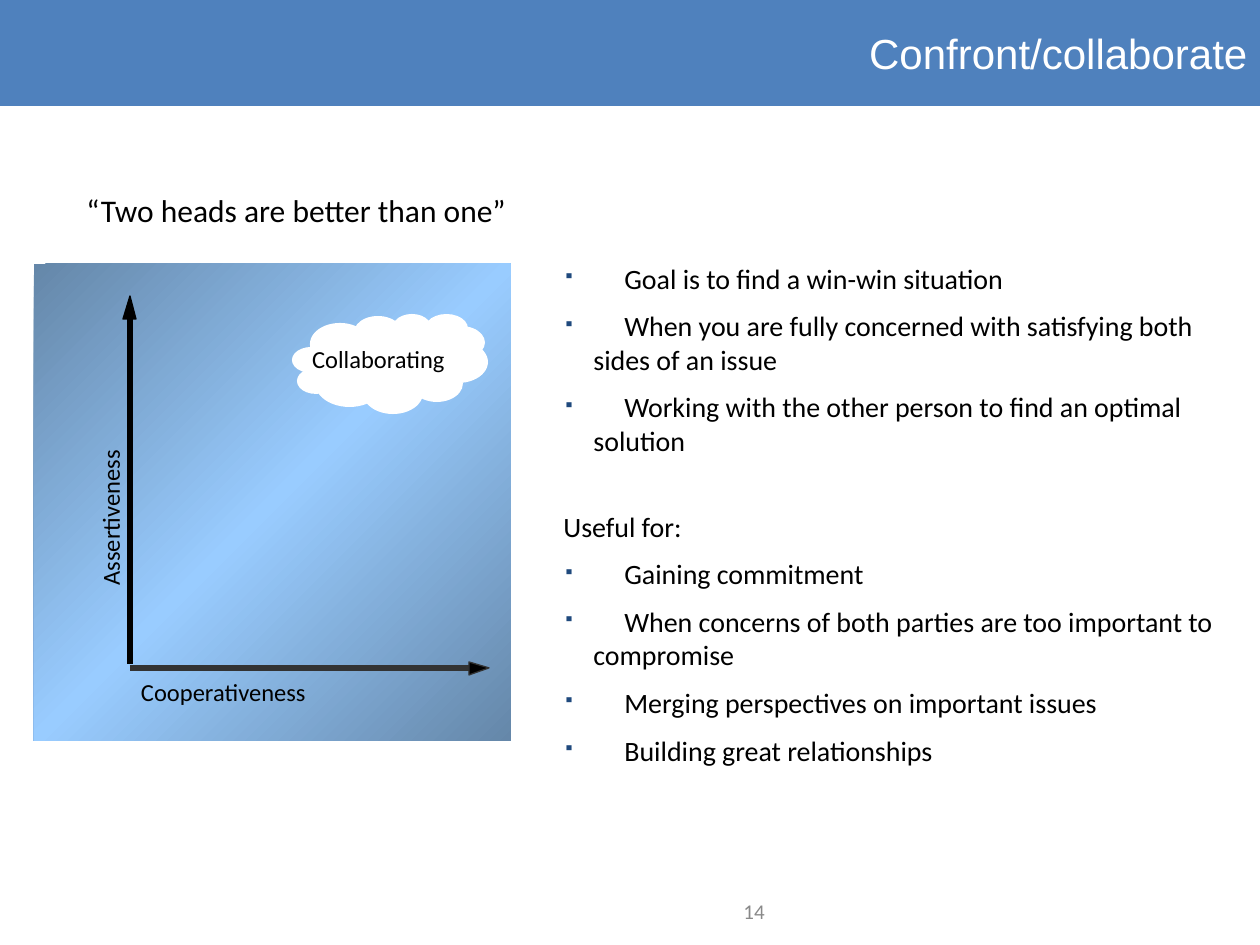
from copy import deepcopy

from lxml.etree import SubElement
from pptx import Presentation
from pptx.dml.color import RGBColor
from pptx.enum.shapes import MSO_CONNECTOR as Line, MSO_SHAPE as Kind
from pptx.enum.text import MSO_ANCHOR as Anchor, MSO_AUTO_SIZE as Fit, PP_ALIGN as Align
from pptx.oxml.ns import qn
from pptx.util import Pt

PX = 914400 / 126

TITLE = "Confront/collaborate"
QUOTE = "“Two heads are better than one”"
GOALS = [
    "Goal is to find a win-win situation",
    "When you are fully concerned with satisfying both sides of an issue",
    "Working with the other person to find an optimal solution",
]
USES = [
    "Gaining commitment",
    "When concerns of both parties are too important to compromise",
    "Merging perspectives on important issues",
    "Building great relationships",
]
STOPS = [(0, "6587A9"), (0.5, "99CCFF"), (1, "6587A9")]
PUFFS = [
    (354, 316, 48, 33), (393, 314, 38, 26), (428, 341, 60, 42),
    (315, 359, 69, 48), (411, 365, 52, 37), (297, 368, 38, 26),
    (292, 347, 39, 26), (310, 323, 60, 42), (363, 372, 60, 42),
    (437, 326, 48, 33), (425, 314, 43, 29),
]
CORE = [
    (360, 329), (368, 324), (399, 324), (422, 321), (451, 331), (465, 328),
    (473, 329), (474, 353), (479, 357), (465, 375), (451, 362), (447, 369),
    (427, 394), (360, 401), (325, 396), (314, 381), (314, 364), (309, 352),
]
# from, to, arrowhead corners, line colour
AXES = [
    ((130, 668), (479, 668), [(489, 668), (469, 662), (469, 675)], "333333"),
    ((130, 664), (130, 307), [(130, 296), (123, 319), (136, 319)], "000000"),
]
# text, box, rotation
LABELS = [
    ("Collaborating", (312, 344, 209, 29), 0),
    ("Cooperativeness", (141, 677, 197, 29), 0),
    ("Assertiveness", (-1, 460, 222, 29), 270),
]
HANG, TEXT = 30, 61  # wrapped lines and first lines of a bullet


def emu(*vals):
    return [round(v * PX) for v in vals]


def color(code):
    return RGBColor.from_string(code)


def paint(shape, fill, edge=None):
    shape.shadow.inherit = False
    shape.fill.solid()
    shape.fill.fore_color.rgb = color(fill)
    if edge:
        shape.line.color.rgb = color(edge)
        shape.line.width = Pt(0.75)
    else:
        shape.line.fill.background()


def outline(shapes, points, fill, edge=None):
    build = shapes.build_freeform(*points[0], scale=PX)
    build.add_line_segments(points[1:], close=True)
    paint(build.convert_to_shape(), fill, edge)


def style(para, size, code="000000", font="Calibri"):
    for run in para.runs:
        run.font.size = Pt(size)
        run.font.name = font
        run.font.color.rgb = color(code)


def write(shapes, box, lines, size, code="000000", inset=True):
    item = shapes.add_textbox(*emu(*box))
    frame = item.text_frame
    frame.word_wrap = True
    if not inset:
        frame.margin_left = frame.margin_right = 0
        frame.margin_top = frame.margin_bottom = 0
    frame.text = "\n".join(lines)
    for num, para in enumerate(frame.paragraphs):
        style(para, size, code)
        if num:
            para.space_before = Pt(size / 2)
    return item


def bullet(para):
    props = para._p.get_or_add_pPr()
    hang, text = emu(HANG, TEXT)
    props.set("marL", str(hang))
    props.set("indent", str(-hang))
    tint = SubElement(props, qn("a:buClr"))
    SubElement(tint, qn("a:srgbClr"), val="1F497D")
    SubElement(props, qn("a:buSzPct"), val="55000")
    SubElement(props, qn("a:buChar"), char="▪")
    tabs = SubElement(props, qn("a:tabLst"))
    for pos in (hang, text):
        SubElement(tabs, qn("a:tab"), pos=str(pos), algn="l")


def points(shapes, box, items, head=()):
    lines = [*head, *("\t" + item for item in items)]
    area = write(shapes, box, lines, 16)
    for para in area.text_frame.paragraphs[len(head):]:
        bullet(para)


def banner(title):
    title.left, title.top, title.width, title.height = emu(0, 0, 1260, 106)
    title.fill.solid()
    title.fill.fore_color.rgb = color("4F81BD")
    frame = title.text_frame
    frame.text = TITLE
    frame.auto_size = Fit.NONE
    frame.vertical_anchor = Anchor.MIDDLE
    para = frame.paragraphs[0]
    para.alignment = Align.RIGHT
    style(para, 24, "FFFFFF", "Arial")


def panel(shapes):
    square = shapes.add_shape(Kind.RECTANGLE, *emu(34, 264, 477, 477))
    square.shadow.inherit = False
    square.line.fill.background()
    square.fill.gradient()
    square.fill.gradient_angle = 315
    stops = square._element.xpath(".//a:gsLst")[0]
    stops.insert(1, deepcopy(stops[0]))
    for stop, (pos, code) in zip(square.fill.gradient_stops, STOPS):
        stop.position = pos
        stop.color.rgb = color(code)


def cloud(shapes):
    group = shapes.add_group_shape().shapes
    for puff in PUFFS:
        paint(group.add_shape(Kind.OVAL, *emu(*puff)), "FFFFFF")
    outline(group, CORE, "FFFFFF")


def axis(shapes, start, end, head, code):
    group = shapes.add_group_shape().shapes
    line = group.add_connector(Line.STRAIGHT, *emu(*start, *end))
    line.line.color.rgb = color(code)
    line.line.width = Pt(3.13)
    SubElement(line._element.spPr, qn("a:effectLst"))
    outline(group, head, "000000", code)


def main():
    deck = Presentation()
    deck.slide_width, deck.slide_height = emu(1260, 945)
    shapes = deck.slides.add_slide(deck.slide_layouts[5]).shapes
    banner(shapes.title)
    panel(shapes)
    cloud(shapes)
    for item in AXES:
        axis(shapes, *item)
    for text, box, turn in LABELS:
        write(shapes, box, [text], 14, inset=False).rotation = turn
    write(shapes, (74, 185, 694, 50), [QUOTE], 18)
    points(shapes, (551, 255, 709, 214), GOALS)
    points(shapes, (551, 503, 709, 285), USES, ["Useful for:"])
    number = write(shapes, (483, 886, 294, 50), ["14"], 12, "898989").text_frame
    number.vertical_anchor = Anchor.MIDDLE
    number.paragraphs[0].alignment = Align.RIGHT
    deck.save("out.pptx")


if __name__ == "__main__":
    main()
